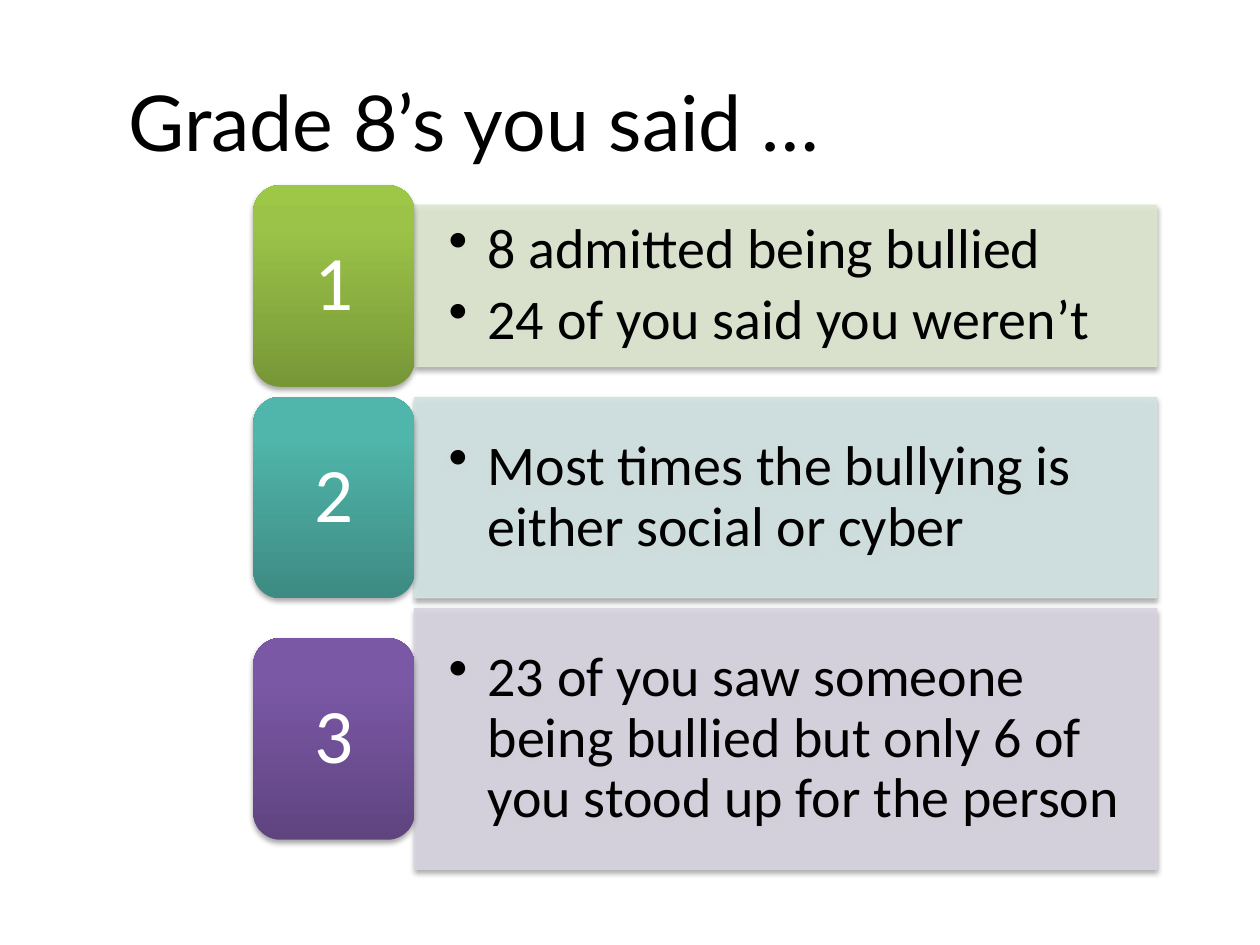
import dataclasses

import lxml.etree
import pptx
import pptx.dml.color
import pptx.enum.shapes
import pptx.enum.text
import pptx.oxml
import pptx.oxml.ns
import pptx.util

INCH = pptx.util.Inches
PT = pptx.util.Pt
KIND = pptx.enum.shapes.MSO_SHAPE
ALIGN = pptx.enum.text.PP_ALIGN
MIDDLE = pptx.enum.text.MSO_ANCHOR.MIDDLE
QN = pptx.oxml.ns.qn
NS = 'xmlns:a="http://schemas.openxmlformats.org/drawingml/2006/main"'

WIDE, HIGH = 10, 7.5
COLORS = {
    "ink": "000000", "paper": "FFFFFF",
    "green": "DEE7D1", "teal": "D2E3E2", "plum": "D8D3E0",
}
# Tile shades from bottom to top
SHADES = {
    "green": ("779737", "9BC348", "9DC746"),
    "teal": ("3D8B83", "50B5AA", "4EB8AC"),
    "plum": ("5F4480", "7B58A6", "7C57A8"),
}
STOPS = (0, 80, 100)

# Grid: a tile column, a panel column, and rows at least one tile high
LEFT, TOP = 0.201 * WIDE, 0.196 * HIGH
TILE_W, TILE_H = 1.28, 1.6
PANEL_X, PANEL_W = LEFT + TILE_W, 0.589 * WIDE
GAP = 0.08


@dataclasses.dataclass
class Row:
    hue: str
    high: float
    items: tuple[str, ...]


ROWS = (
    Row("green", 1.28, ("8 admitted being bullied", "24 of you said you weren’t")),
    Row("teal", 1.59, ("Most times the bullying is either social or cyber",)),
    Row("plum", 2.07, ("23 of you saw someone being bullied but only 6 of "
                       "you stood up for the person",)),
)


def color(name: str) -> pptx.dml.color.RGBColor:
    return pptx.dml.color.RGBColor.from_string(COLORS[name])


def write(para, text: str, size: int, font: str, ink: str) -> None:
    run = para.add_run()
    run.text = text
    run.font.size = PT(size)
    run.font.name = font
    run.font.color.rgb = color(ink)


def shade(shape) -> None:
    """Give a shape a soft shadow straight below it."""
    shape.shadow.inherit = False
    effects = shape._element.spPr.find(QN("a:effectLst"))
    effects.append(pptx.oxml.parse_xml(
        f'<a:outerShdw {NS} blurRad="{PT(3.1)}" dist="{PT(1.8)}" dir="5400000" '
        'rotWithShape="0"><a:srgbClr val="000000"><a:alpha val="35000"/>'
        '</a:srgbClr></a:outerShdw>'))


def blend(shape, hue: str) -> None:
    """Fill a shape with a gradient that rises from its foot."""
    stops = "".join(
        f'<a:gs pos="{stop * 1000}"><a:srgbClr val="{tone}"/></a:gs>'
        for stop, tone in zip(STOPS, SHADES[hue]))
    fill = pptx.oxml.parse_xml(
        f'<a:gradFill {NS} rotWithShape="1"><a:gsLst>{stops}</a:gsLst>'
        '<a:lin ang="16200000" scaled="0"/></a:gradFill>')
    shape._element.spPr.find(QN("a:prstGeom")).addnext(fill)


def pad(shape, side: float, edge: float):
    """Set the text margins and return the text frame."""
    frame = shape.text_frame
    frame.word_wrap = True
    frame.vertical_anchor = MIDDLE
    frame.margin_left = frame.margin_right = INCH(side)
    frame.margin_top = frame.margin_bottom = INCH(edge)
    return frame


def bullet(para) -> None:
    props = para._p.get_or_add_pPr()
    props.set("marL", str(INCH(0.31)))
    props.set("indent", str(-INCH(0.31)))
    mark = lxml.etree.SubElement(props, QN("a:buChar"))
    mark.set("char", "•")


def panel(slide, row: Row, top: float) -> None:
    shape = slide.shapes.add_shape(
        KIND.RECTANGLE, INCH(PANEL_X), INCH(top), INCH(PANEL_W), INCH(row.high))
    shape.fill.solid()
    shape.fill.fore_color.rgb = color(row.hue)
    shape.line.color.rgb = color(row.hue)
    shape.line.width = PT(0.75)
    for tint in shape._element.spPr.iter(QN("a:srgbClr")):
        lxml.etree.SubElement(tint, QN("a:alpha")).set("val", "90000")
    shade(shape)

    frame = pad(shape, 0.27, 0.14)
    for spot, item in enumerate(row.items):
        para = frame.add_paragraph() if spot else frame.paragraphs[0]
        bullet(para)
        para.alignment = ALIGN.LEFT
        para.line_spacing = 0.9
        para.space_after = PT(5.8)
        write(para, item, 32, "Calibri", "ink")


def tile(slide, row: Row, label: str, top: float) -> None:
    shape = slide.shapes.add_shape(
        KIND.ROUNDED_RECTANGLE, INCH(LEFT), INCH(top), INCH(TILE_W), INCH(TILE_H))
    blend(shape, row.hue)
    shape.line.fill.background()
    shade(shape)
    para = pad(shape, 0.18, 0.09).paragraphs[0]
    para.alignment = ALIGN.CENTER
    para.line_spacing = 0.9
    write(para, label, 44, "Calibri", "paper")


def main() -> None:
    deck = pptx.Presentation()
    deck.slide_width, deck.slide_height = INCH(WIDE), INCH(HIGH)
    slide = deck.slides.add_slide(deck.slide_layouts[5])

    # Title
    title = slide.shapes.title
    title.left, title.top = INCH(0.092 * WIDE), INCH(0.044 * HIGH)
    title.width, title.height = INCH(0.883 * WIDE), INCH(1.25)
    title.text_frame.vertical_anchor = MIDDLE
    para = title.text_frame.paragraphs[0]
    para.alignment = ALIGN.LEFT
    write(para, "Grade 8’s you said …", 44, "Lato", "ink")

    # Numbered rows, with tile and panel centred on each other
    top = TOP
    for count, row in enumerate(ROWS, 1):
        high = max(row.high, TILE_H)
        panel(slide, row, top + (high - row.high) / 2)
        tile(slide, row, str(count), top + (high - TILE_H) / 2)
        top += high + GAP

    deck.save("out.pptx")


if __name__ == "__main__":
    main()
